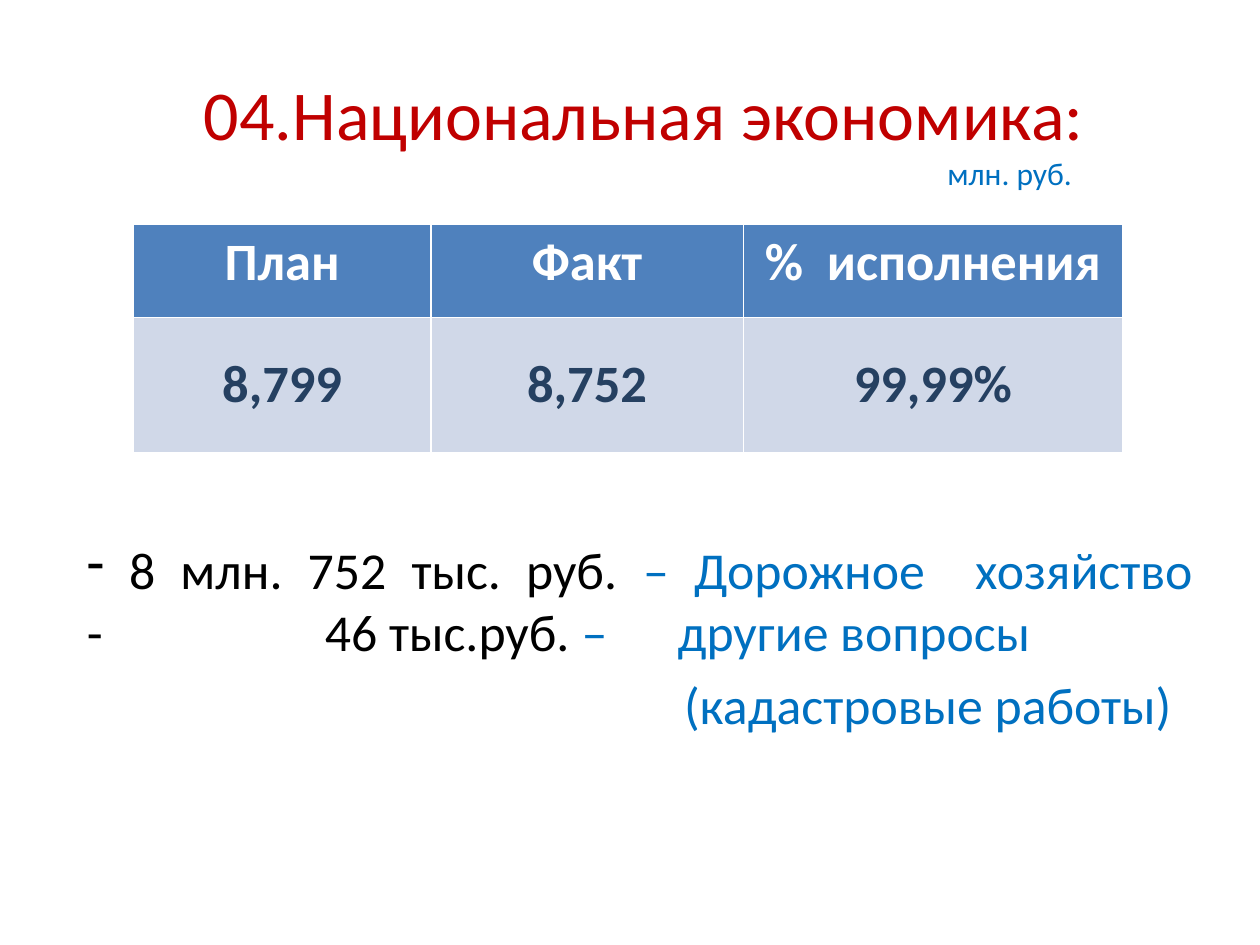
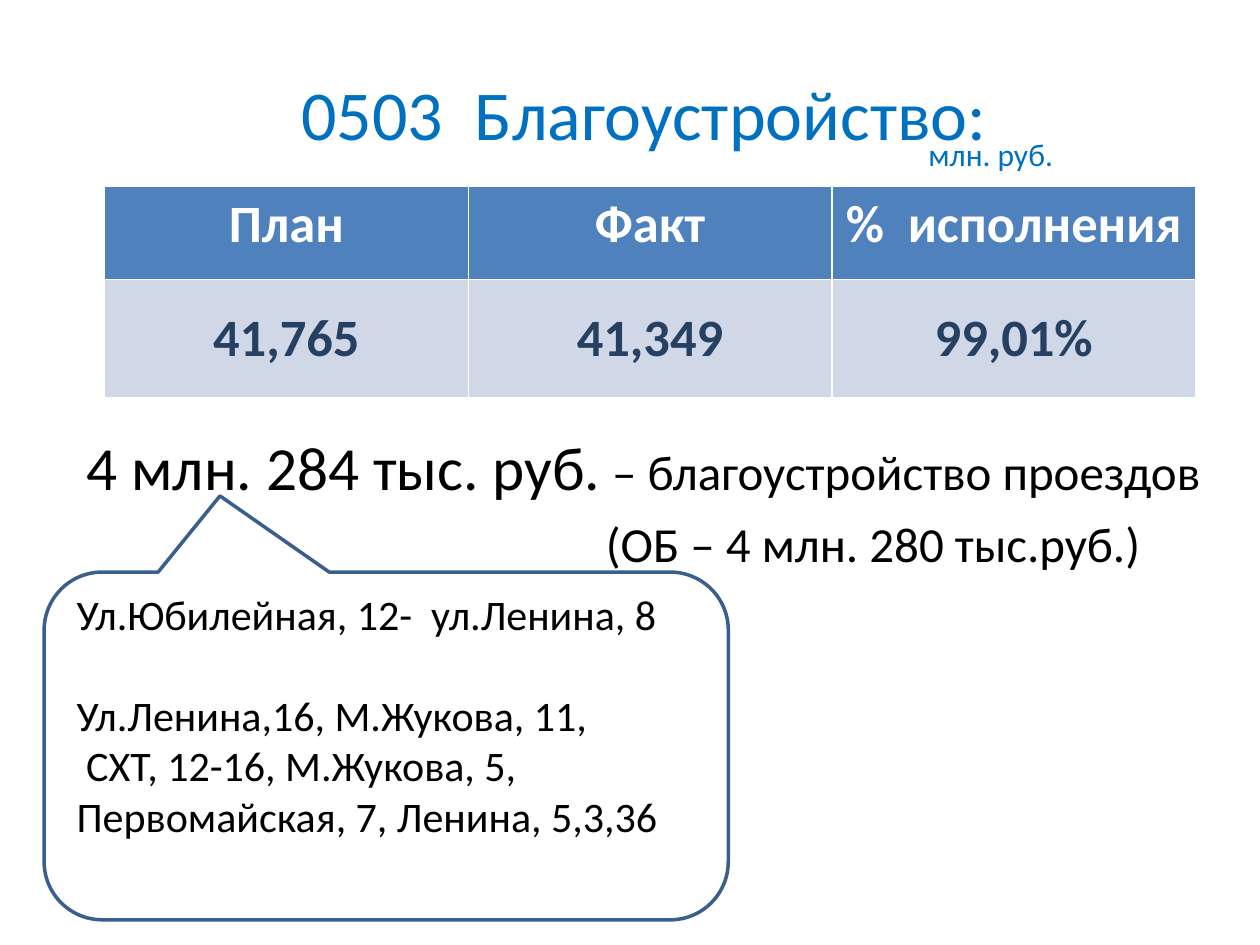
"""Builds two budget slides: national economy and public improvements."""
from lxml import etree
from pptx import Presentation
from pptx.dml.color import RGBColor
from pptx.enum.shapes import MSO_SHAPE
from pptx.enum.text import MSO_ANCHOR, PP_ALIGN
from pptx.oxml.ns import qn
from pptx.util import Emu, Inches, Pt

LEFT, CENTER, JUSTIFY = PP_ALIGN.LEFT, PP_ALIGN.CENTER, PP_ALIGN.JUSTIFY
TOP, MIDDLE = MSO_ANCHOR.TOP, MSO_ANCHOR.MIDDLE
CALLOUT = MSO_SHAPE.ROUNDED_RECTANGULAR_CALLOUT

BLACK = RGBColor(0x00, 0x00, 0x00)
WHITE = RGBColor(0xFF, 0xFF, 0xFF)
RED = RGBColor(0xC0, 0x00, 0x00)
BLUE = RGBColor(0x00, 0x70, 0xC0)
NAVY = RGBColor(0x25, 0x40, 0x61)
HEADER_FILL = RGBColor(0x4F, 0x81, 0xBD)
VALUE_FILL = RGBColor(0xD0, 0xD8, 0xE8)
OUTLINE = RGBColor(0x3A, 0x5F, 0x8C)

FONT = "Calibri"
COLUMNS, ROWS = 100, 75
HEADINGS = ("План", "Факт", "%  исполнения")
HEADER_HEIGHT = 7.4


class Deck:
    """Holds the shared style, the grid and the current slide."""

    def __init__(self):
        self.prs = Presentation()
        self.prs.slide_width, self.prs.slide_height = Inches(10), Inches(7.5)

    def x(self, columns):
        return Emu(round(self.prs.slide_width * columns / COLUMNS))

    def y(self, rows):
        return Emu(round(self.prs.slide_height * rows / ROWS))

    def area(self, left, top, width, height):
        return self.x(left), self.y(top), self.x(width), self.y(height)

    def style(self, run, size, color, bold=False):
        run.font.name, run.font.size, run.font.bold = FONT, Pt(size), bold
        run.font.color.rgb = color

    def new_slide(self, title, color):
        self.slide = self.prs.slides.add_slide(self.prs.slide_layouts[6])
        self.text((8.6, 2.3, 85, 13.3), title, 40, color, CENTER, MIDDLE)

    def frame(self, box, anchor=TOP):
        frame = self.slide.shapes.add_textbox(*self.area(*box)).text_frame
        frame.word_wrap, frame.vertical_anchor = True, anchor
        return frame

    def text(self, box, words, size, color, align=LEFT, anchor=TOP):
        frame = self.frame(box, anchor)
        frame.text = words
        for paragraph in frame.paragraphs:
            paragraph.alignment = align
            for run in paragraph.runs:
                self.style(run, size, color)
        return frame

    def unit(self, left, top):
        self.text((left, top, 12.5, 4), "млн. руб.", 18, BLUE)

    def rich_line(self, paragraph, parts, indent=0, align=LEFT):
        paragraph.alignment, paragraph.space_before = align, Pt(6)
        paragraph._p.get_or_add_pPr().set("marL", str(self.x(indent)))
        for words, size, color in parts:
            if words == "\n":
                paragraph.add_line_break()
                continue
            run = paragraph.add_run()
            run.text = words
            self.style(run, size, color)

    def dash_and_tabs(self, paragraph, stops):
        props = paragraph._p.get_or_add_pPr()
        etree.SubElement(props, qn("a:buChar"), char="-")
        tabs = etree.SubElement(props, qn("a:tabLst"))
        for stop in stops:
            etree.SubElement(tabs, qn("a:tab"), pos=str(self.x(stop)), algn="l")

    def borders(self, cell):
        props = cell._tc.get_or_add_tcPr()
        for place, side in enumerate(("a:lnL", "a:lnR", "a:lnT", "a:lnB")):
            line = etree.Element(qn(side), w=str(Pt(1)))
            fill = etree.SubElement(line, qn("a:solidFill"))
            etree.SubElement(fill, qn("a:srgbClr"), val=str(WHITE))
            props.insert(place, line)

    def budget_table(self, left, top, widths, value_height, values):
        heights = (HEADER_HEIGHT, value_height)
        box = self.area(left, top, sum(widths), sum(heights))
        table = self.slide.shapes.add_table(2, len(widths), *box).table
        for column, width in zip(table.columns, widths):
            column.width = self.x(width)
        looks = ((HEADINGS, HEADER_FILL, WHITE, TOP), (values, VALUE_FILL, NAVY, MIDDLE))
        for row, height, (entries, fill, color, anchor) in zip(table.rows, heights, looks):
            row.height = self.y(height)
            for cell, entry in zip(row.cells, entries):
                cell.text, cell.vertical_anchor = entry, anchor
                cell.fill.solid()
                cell.fill.fore_color.rgb = fill
                paragraph = cell.text_frame.paragraphs[0]
                paragraph.alignment = CENTER
                self.style(paragraph.runs[0], 30, color, True)
                self.borders(cell)

    def callout(self, box, adjustments):
        bubble = self.slide.shapes.add_shape(CALLOUT, *self.area(*box))
        bubble.shadow.inherit = False
        bubble.rotation = 180
        bubble.fill.background()
        bubble.line.color.rgb, bubble.line.width = OUTLINE, Pt(2)
        for number, value in enumerate(adjustments):
            bubble.adjustments[number] = value


def economy_slide(deck):
    """Adds the national economy slide."""
    deck.new_slide("04.Национальная экономика:", RED)
    deck.budget_table(10.6, 17.8, (23.6, 24.8, 30.1), 10.7, ("8,799", "8,752", "99,99%"))
    spending = deck.frame((5.9, 42.2, 89.8, 15.8))
    size = 29.6
    roads = spending.paragraphs[0]
    deck.rich_line(roads, (
        (" 8 млн. 752 тыс. руб. ", size, BLACK),
        ("– Дорожное  хозяйство", size, BLUE),
        ("\n", size, BLUE),
        ("-\t46 тыс.руб. ", size, BLACK),
        ("–\tдругие вопросы", size, BLUE),
    ), align=JUSTIFY)
    deck.dash_and_tabs(roads, (18.9, 46.9))
    deck.rich_line(spending.add_paragraph(), (("(кадастровые работы)", size, BLUE),), 47.4)
    deck.unit(74.2, 11.7)


def improvement_slide(deck):
    """Adds the public improvements slide."""
    deck.new_slide("0503  Благоустройство:", BLUE)
    deck.budget_table(8.3, 14.8, (28.87,) * 3, 9.4, ("41,765", "41,349", "99,01%"))
    driveways = deck.frame((5.9, 33.6, 91.3, 15))
    deck.rich_line(driveways.paragraphs[0], (
        ("4 млн. 284 тыс. руб.", 35, BLACK),
        (" – благоустройство проездов", 28, BLACK),
    ))
    deck.rich_line(driveways.add_paragraph(), (("(ОБ – 4 млн. 280 тыс.руб.)", 28, BLACK),), 41.2)
    deck.unit(72.7, 10.2)
    deck.callout((3.5, 45.4, 54.3, 27.6), (0.243, 0.719, 0.167))
    addresses = deck.text(
        (5.1, 46.2, 51.2, 21.2),
        "Ул.Юбилейная, 12-  ул.Ленина, 8\n"
        "Ул.Ленина,16, М.Жукова, 11,\n"
        " СХТ, 12-16, М.Жукова, 5, Первомайская, 7, Ленина, 5,3,36",
        24, BLACK)
    addresses.paragraphs[1].space_before = Pt(29)


def main():
    """Builds and saves the deck."""
    deck = Deck()
    economy_slide(deck)
    improvement_slide(deck)
    deck.prs.save("out.pptx")


if __name__ == "__main__":
    main()
